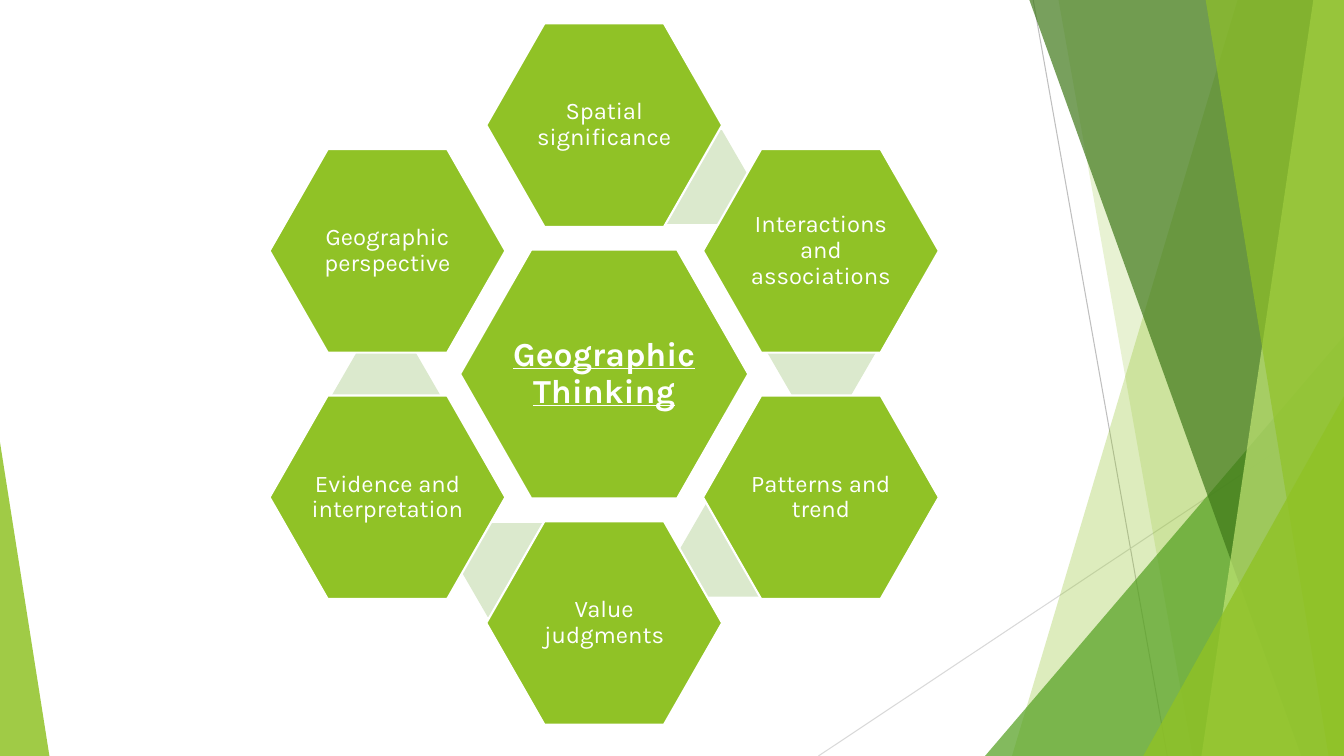
from lxml.etree import SubElement
from pptx import Presentation
from pptx.dml.color import RGBColor
from pptx.enum.shapes import MSO_CONNECTOR, MSO_SHAPE
from pptx.enum.text import MSO_ANCHOR, PP_ALIGN
from pptx.oxml.ns import qn
from pptx.util import Pt

COLORS = {
    "green": "90C226",
    "leaf": "54A021",
    "forest": "3F7819",
    "lime": "C0E474",
    "pale": "DBE9CD",
    "white": "FFFFFF",
    "gray": "BFBFBF",
    "light gray": "D9D9D9",
}
WIDTH, HEIGHT, TOP = 960, 540, -0.6
CENTER_X, CENTER_Y = 431.6, 267.2
CORE_SIZE, PETAL_SIZE, LINK_SIZE = (205.9, 177.8), (168.5, 145.4), (77.8, 67)
SIDE, NEAR, FAR = 154.8, 88, 177.8

THIN_LINES = [
    ((738, 0), (833.8, HEIGHT), "gray"),
    ((WIDTH, 290.2), (584.6, HEIGHT), "light gray"),
]
BACK_BANDS = [
    (884.2, 722.9, "green", 30),
    (756, 851.8, "green", 20),
]
FRONT_BANDS = [
    (735.1, 929.5, "forest", 70),
    (938.2, 858.2, "lime", 70),
    (861.1, 949, "green", 65),
]
PETALS = [
    ("Spatial significance", (0, -FAR), (64.5, -140.8)),
    ("Interactions and associations", (SIDE, -NEAR), (155.2, -15.6)),
    ("Patterns and trend", (SIDE, NEAR), (92.6, 125.6)),
    ("Value judgments", (0, FAR), (-63.7, 140)),
    ("Evidence and interpretation", (-SIDE, NEAR), (-155.8, 15.4)),
    ("Geographic perspective", (-SIDE, -NEAR), None),
]


def color(name):
    return RGBColor.from_string(COLORS[name])


def set_values(target, values):
    for name, value in values.items():
        setattr(target, name, value)


def paint(shape, fill, opacity=100):
    shape.shadow.inherit = False
    shape.fill.solid()
    shape.fill.fore_color.rgb = color(fill)
    shape.line.fill.background()
    if opacity < 100:
        fill_color = shape._element.spPr.find(qn("a:solidFill"))[0]
        SubElement(fill_color, qn("a:alpha"), val=str(opacity * 1000))


def add_thin_line(slide, start, end, line_color):
    ends = [Pt(value) for value in start + end]
    connector = slide.shapes.add_connector(MSO_CONNECTOR.STRAIGHT, *ends)
    connector.line.color.rgb = color(line_color)
    connector.line.width = Pt(0.75)
    SubElement(connector._element.spPr, qn("a:effectLst"))


def add_band(slide, top_x, bottom_x, fill, opacity):
    builder = slide.shapes.build_freeform(Pt(top_x), Pt(TOP))
    corners = [(WIDTH, TOP), (WIDTH, HEIGHT), (bottom_x, HEIGHT)]
    builder.add_line_segments([(Pt(x), Pt(y)) for x, y in corners], close=True)
    paint(builder.convert_to_shape(), fill, opacity)


def add_triangle(slide, left, width, height, apex, fill, opacity):
    box = [Pt(value) for value in (left, HEIGHT - height, width, height)]
    shape = slide.shapes.add_shape(MSO_SHAPE.ISOSCELES_TRIANGLE, *box)
    shape.adjustments[0] = apex
    paint(shape, fill, opacity)


def add_hexagon(slide, offset, size, corner, fill):
    width, height = size
    left = CENTER_X + offset[0] - width / 2
    top = CENTER_Y + offset[1] - height / 2
    box = [Pt(value) for value in (left, top, width, height)]
    shape = slide.shapes.add_shape(MSO_SHAPE.HEXAGON, *box)
    shape.adjustments[0] = corner
    paint(shape, fill)
    return shape


def add_labelled_hexagon(slide, text, offset, size, inset, font):
    shape = add_hexagon(slide, offset, size, 0.286, "green")
    shape.line.color.rgb = color("white")
    shape.line.width = Pt(1.5)
    frame = shape.text_frame
    sides = ("left", "right", "top", "bottom")
    set_values(frame, {f"margin_{side}": Pt(inset) for side in sides})
    set_values(frame, {"word_wrap": True, "vertical_anchor": MSO_ANCHOR.MIDDLE})
    paragraph = frame.paragraphs[0]
    set_values(paragraph, {"alignment": PP_ALIGN.CENTER, "line_spacing": 0.9})
    run = paragraph.add_run()
    run.text = text
    set_values(run.font, {"name": "Karla", **font})
    run.font.color.rgb = color("white")


def add_backdrop(slide):
    for line in THIN_LINES:
        add_thin_line(slide, *line)
    for band in BACK_BANDS:
        add_band(slide, *band)
    add_triangle(slide, 703.6, 256.4, 300, 1, "leaf", 72)
    for band in FRONT_BANDS:
        add_band(slide, *band)
    add_triangle(slide, 816.6, 143.4, 257, 1, "green", 80)
    add_triangle(slide, 0, 35.3, 224, 0, "green", 85)


def add_flower(slide):
    core_font = {"size": Pt(24), "bold": True, "underline": True}
    add_labelled_hexagon(
        slide, "Geographic Thinking", (0, 0), CORE_SIZE, 2.2, core_font
    )
    for text, offset, link_offset in PETALS:
        if link_offset:
            add_hexagon(slide, link_offset, LINK_SIZE, 0.289, "pale")
        add_labelled_hexagon(slide, text, offset, PETAL_SIZE, 1.5, {"size": Pt(17)})


def main():
    presentation = Presentation()
    presentation.slide_width = Pt(WIDTH)
    presentation.slide_height = Pt(HEIGHT)
    slide = presentation.slides.add_slide(presentation.slide_layouts[6])
    add_backdrop(slide)
    add_flower(slide)
    presentation.save("out.pptx")


if __name__ == "__main__":
    main()
